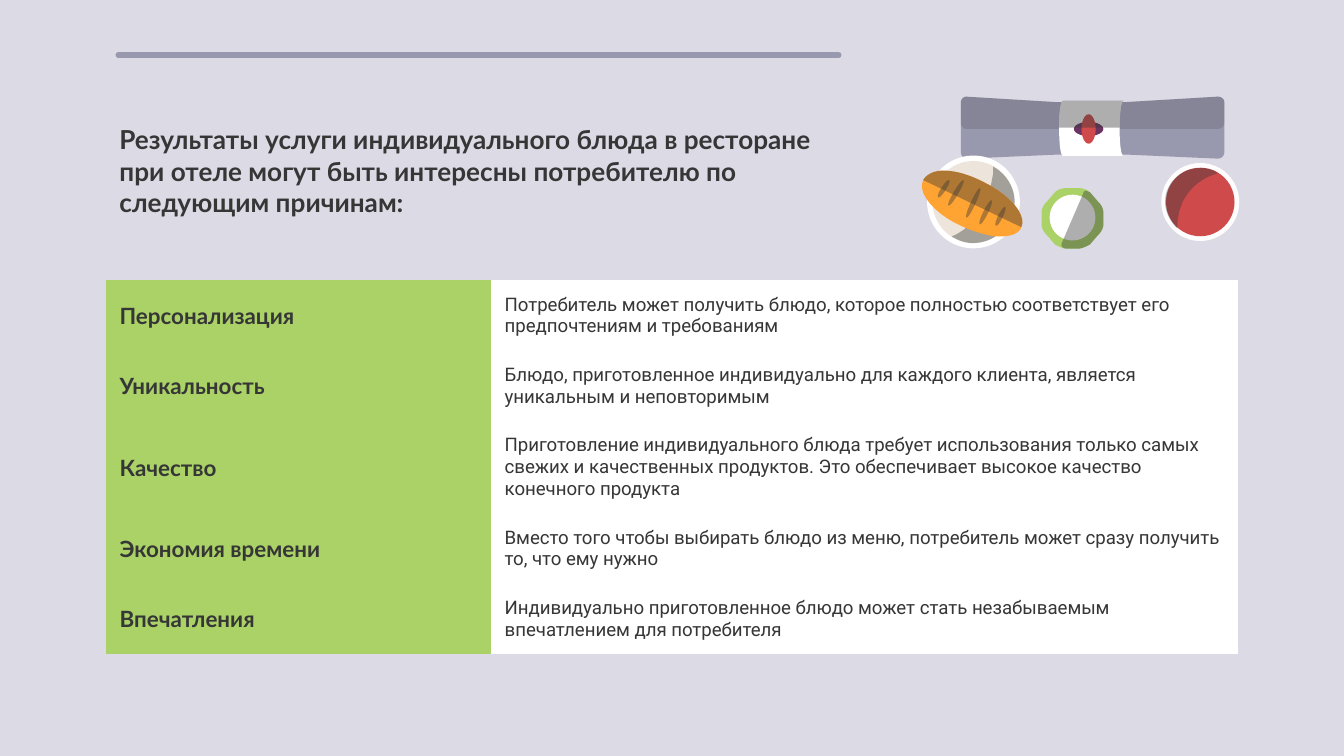
from dataclasses import dataclass
from math import hypot

from lxml.etree import SubElement
from pptx import Presentation
from pptx.dml.color import RGBColor
from pptx.enum.shapes import MSO_CONNECTOR, MSO_SHAPE
from pptx.enum.text import MSO_ANCHOR
from pptx.oxml.ns import qn
from pptx.util import Pt

COLORS = {
    "background": "DCDAE4",
    "text": "363636",
    "green": "AAD267",
    "white": "FFFFFF",
    "plate_rim": "FEFCFC",
    "lavender": "9898AE",
    "purple": "6C3561",
    "red": "CF4A4A",
    "cream": "EDE5DB",
    "orange": "FFA333",
}
NO_GRID_STYLE = "{2D5ABB26-0587-4C30-8999-92F81FD0307C}"
MARGIN = 7.2
SHADE_OPACITY = 40
CURVE_STEPS = 10


@dataclass(frozen=True)
class Reason:
    name: str
    description: str


@dataclass(frozen=True)
class Disc:
    center_x: float
    center_y: float
    width: float
    height: float
    color: str


@dataclass(frozen=True)
class Outline:
    """Start point, then segments: 2 numbers for a line, 6 for a Bézier curve."""
    start: tuple
    segments: list
    color: str = "text"
    opacity: int = 100


TITLE = ("Результаты услуги индивидуального блюда в ресторане при отеле "
         "могут быть интересны потребителю по следующим причинам:")
REASONS = [
    Reason("Персонализация", "Потребитель может получить блюдо, которое полностью "
           "соответствует его предпочтениям и требованиям"),
    Reason("Уникальность", "Блюдо, приготовленное индивидуально для каждого клиента, "
           "является уникальным и неповторимым"),
    Reason("Качество", "Приготовление индивидуального блюда требует использования только "
           "самых свежих и качественных продуктов. Это обеспечивает высокое качество "
           "конечного продукта"),
    Reason("Экономия времени", "Вместо того чтобы выбирать блюдо из меню, потребитель "
           "может сразу получить то, что ему нужно"),
    Reason("Впечатления", "Индивидуально приготовленное блюдо может стать незабываемым "
           "впечатлением для потребителя"),
]

NAPKIN_START = (514.8, 54.7)
NAPKIN_TOP = [(514.8, 53.3, 516.2, 51.8, 517.7, 51.8), (565.2, 54.7), (603.4, 54.7),
              (652.3, 51.8), (654.5, 51.8, 655.9, 53.3, 655.9, 54.7)]
NAPKIN_BOTTOM = [(655.9, 81.4), (655.9, 83.5, 654.5, 85, 652.3, 85), (602.6, 82.8),
                 (567.4, 82.8), (517.7, 85), (516.2, 85, 514.8, 83.5, 514.8, 81.4)]
NAPKIN_FOLD = [(655.9, 65.5), (655.9, 67.7, 654.5, 69.1, 652.3, 69.1), (517.7, 69.1),
               (516.2, 69.1, 514.8, 67.7, 514.8, 65.5)]
RING_START = (567.4, 68.4)
RING_TOP = [(567.4, 60.5, 568.1, 54, 569.5, 54), (601.9, 54),
            (600.5, 54, 599.8, 60.5, 599.8, 68.4)]
RING_BOTTOM = [(599.8, 77, 600.5, 83.5, 601.9, 83.5), (569.5, 83.5),
               (568.1, 83.5, 567.4, 77, 567.4, 68.4)]
BREAD_CRUST = [(496.1, 93.6, 500.4, 91.4, 505.4, 91.4),
               (511.9, 91.4, 519.1, 93.6, 526.3, 97.2),
               (541.4, 104.4, 550.1, 115.2, 547.2, 121.7)]
BOWL_RIGHT = [(588.2, 108), (589.7, 109.4, 591.1, 111.6, 591.1, 113.8), (591.1, 120.2),
              (591.1, 122.4, 589.7, 124.6, 588.2, 126), (583.9, 131),
              (582.5, 131.8, 579.6, 133.2, 578.2, 133.2)]


def cut(x1: float, y1: float, x2: float, y2: float) -> Outline:
    """A narrow lens between two points, scored into the bread."""
    length = hypot(x2 - x1, y2 - y1)
    dx, dy = 1.7 * (y2 - y1) / length, 1.7 * (x1 - x2) / length
    return Outline((x1, y1), [(x1 + dx, y1 + dy, x2 + dx, y2 + dy, x2, y2),
                              (x2 - dx, y2 - dy, x1 - dx, y1 - dy, x1, y1)],
                   opacity=SHADE_OPACITY)


ILLUSTRATION = [
    Outline(NAPKIN_START, NAPKIN_TOP + NAPKIN_BOTTOM, "lavender"),
    Outline(NAPKIN_START, NAPKIN_TOP + NAPKIN_FOLD, opacity=19),
    Outline(RING_START, RING_TOP + RING_BOTTOM, "white"),
    Disc(583.2, 69.1, 15.8, 7.6, "purple"),
    Disc(583.2, 69.1, 7.6, 15.8, "red"),
    Outline(RING_START, RING_TOP, opacity=SHADE_OPACITY),
    Disc(643, 108.2, 41.8, 41.8, "plate_rim"),
    Disc(643, 108.2, 36.7, 36.7, "red"),
    Outline((630.7, 122.4), [(627.1, 118.8, 624.2, 113.8, 624.2, 108),
                             (624.2, 97.9, 632.9, 90, 643, 90),
                             (646.6, 90, 650.2, 90.7, 652.3, 92.9),
                             (652.3, 92.9, 632.2, 97.2, 630.7, 119.5)], opacity=SHADE_OPACITY),
    Disc(521.5, 108.2, 49.7, 49.7, "white"),
    Disc(521.5, 108.2, 43.9, 43.9, "cream"),
    Outline((521.3, 130.3), [(517, 130.3, 513.4, 128.9, 509.8, 126.7),
                             (509.8, 126.7, 528.5, 121, 532.1, 92.9), (532.1, 89.3),
                             (538.6, 92.9, 543.6, 100.1, 543.6, 108),
                             (543.6, 120.2, 533.5, 130.3, 521.3, 130.3)], opacity=SHADE_OPACITY),
    Outline((535.7, 126.7), [(529.9, 126.7, 522.7, 124.6, 514.8, 121),
                             (500.4, 114.5, 491, 103, 494.6, 96.5), *BREAD_CRUST,
                             (545.8, 125.3, 541.4, 126.7, 535.7, 126.7)], "orange"),
    cut(502.6, 105.8, 508.5, 96.5),
    cut(508.1, 110.2, 516.2, 96.5),
    cut(517.7, 116.6, 525, 100.8),
    cut(524.9, 120.2, 531.3, 107.3),
    cut(533.5, 121, 538.5, 110.9),
    Outline((547.2, 121.7), [(494.6, 96.5), *BREAD_CRUST], opacity=SHADE_OPACITY),
    Outline((571, 133.2), [(569.5, 133.2, 566.6, 131.8, 565.2, 131), (560.9, 126),
                           (559.4, 124.6, 558, 122.4, 558, 120.2), (558, 113.8),
                           (558, 111.6, 559.4, 109.4, 560.9, 108), (565.2, 103),
                           (566.6, 101.5, 569.5, 100.8, 571, 100.8), (578.2, 100.8),
                           (579.6, 100.8, 582.5, 101.5, 583.9, 103), *BOWL_RIGHT], "green"),
    Disc(574.6, 116.6, 24.5, 24.5, "white"),
    Outline((571, 133.2), [(569.5, 133.2, 568.1, 131.8, 568.8, 130.3), (580.3, 103.7),
                           (580.3, 103, 581, 102.2, 581.8, 102.2),
                           (582.5, 102.2, 583.2, 103, 583.9, 103), *BOWL_RIGHT],
            opacity=SHADE_OPACITY),
]


def paint(fill, color: str, opacity: int = 100) -> None:
    fill.solid()
    fill.fore_color.rgb = RGBColor.from_string(COLORS[color])
    if opacity < 100:
        color_element = fill._xPr.find(qn("a:solidFill"))[0]
        SubElement(color_element, qn("a:alpha"), val=str(opacity * 1000))


def outline_points(outline: Outline) -> list:
    points = [outline.start]
    for segment in outline.segments:
        if len(segment) == 2:
            points.append(segment)
            continue
        controls = [points[-1], segment[:2], segment[2:4], segment[4:]]
        for step in range(1, CURVE_STEPS + 1):
            t = step / CURVE_STEPS
            weights = ((1 - t) ** 3, 3 * t * (1 - t) ** 2, 3 * t ** 2 * (1 - t), t ** 3)
            points.append(tuple(sum(weight * control[axis]
                                    for weight, control in zip(weights, controls))
                                for axis in (0, 1)))
    return points


def draw_part(slide, part: Disc | Outline) -> None:
    if isinstance(part, Disc):
        shape = slide.shapes.add_shape(
            MSO_SHAPE.OVAL, Pt(part.center_x - part.width / 2),
            Pt(part.center_y - part.height / 2), Pt(part.width), Pt(part.height))
        paint(shape.fill, part.color)
    else:
        first, *others = [(Pt(x), Pt(y)) for x, y in outline_points(part)]
        builder = slide.shapes.build_freeform(*first)
        builder.add_line_segments(others, close=True)
        shape = builder.convert_to_shape()
        paint(shape.fill, part.color, part.opacity)
    shape.line.fill.background()
    shape.shadow.inherit = False


def write_text(text_frame, text: str, font_name: str, size: float, bold: bool) -> None:
    text_frame.text = text
    font = text_frame.paragraphs[0].runs[0].font
    font.name, font.size, font.bold = font_name, Pt(size), bold
    font.color.rgb = RGBColor.from_string(COLORS["text"])


def draw_title(slide) -> None:
    text_frame = slide.shapes.add_textbox(Pt(56.9), Pt(72.7), Pt(392.4), Pt(37.4)).text_frame
    text_frame.word_wrap = True
    text_frame.vertical_anchor = MSO_ANCHOR.MIDDLE
    text_frame.margin_left = text_frame.margin_top = text_frame.margin_bottom = Pt(MARGIN)
    text_frame.margin_right = 0
    write_text(text_frame, TITLE, "Lato", 14, True)


def draw_reasons(slide) -> None:
    frame = slide.shapes.add_table(len(REASONS), 2, Pt(56.9), Pt(150.2), Pt(606.6),
                                   Pt(27.4 * len(REASONS)))
    table = frame.table
    table.first_row = table.horz_banding = False
    next(frame._element.iter(qn("a:tableStyleId"))).text = NO_GRID_STYLE
    for column, width in zip(table.columns, (206.3, 400.3)):
        column.width = Pt(width)
    for row, reason in zip(table.rows, REASONS):
        name_cell, description_cell = row.cells
        write_text(name_cell.text_frame, reason.name, "Lato", 12, True)
        write_text(description_cell.text_frame, reason.description, "Roboto", 10, False)
        for cell, color in ((name_cell, "green"), (description_cell, "white")):
            paint(cell.fill, color)
            cell.vertical_anchor = MSO_ANCHOR.MIDDLE
            cell.margin_left = cell.margin_right = Pt(MARGIN)
            cell.margin_top = cell.margin_bottom = Pt(MARGIN)


def draw_rule(slide) -> None:
    rule = slide.shapes.add_connector(MSO_CONNECTOR.STRAIGHT, Pt(63.4), Pt(29.5),
                                      Pt(449.3), Pt(29.5))
    rule.line.width = Pt(3)
    paint(rule.line.fill, "lavender")
    properties = rule._element.spPr
    properties.find(qn("a:ln")).set("cap", "rnd")
    SubElement(properties, qn("a:effectLst"))


def main() -> None:
    presentation = Presentation()
    presentation.slide_width, presentation.slide_height = Pt(720), Pt(405)
    slide = presentation.slides.add_slide(presentation.slide_layouts[6])
    paint(slide.background.fill, "background")
    draw_reasons(slide)
    draw_title(slide)
    for part in ILLUSTRATION:
        draw_part(slide, part)
    draw_rule(slide)
    presentation.save("out.pptx")


if __name__ == "__main__":
    main()
